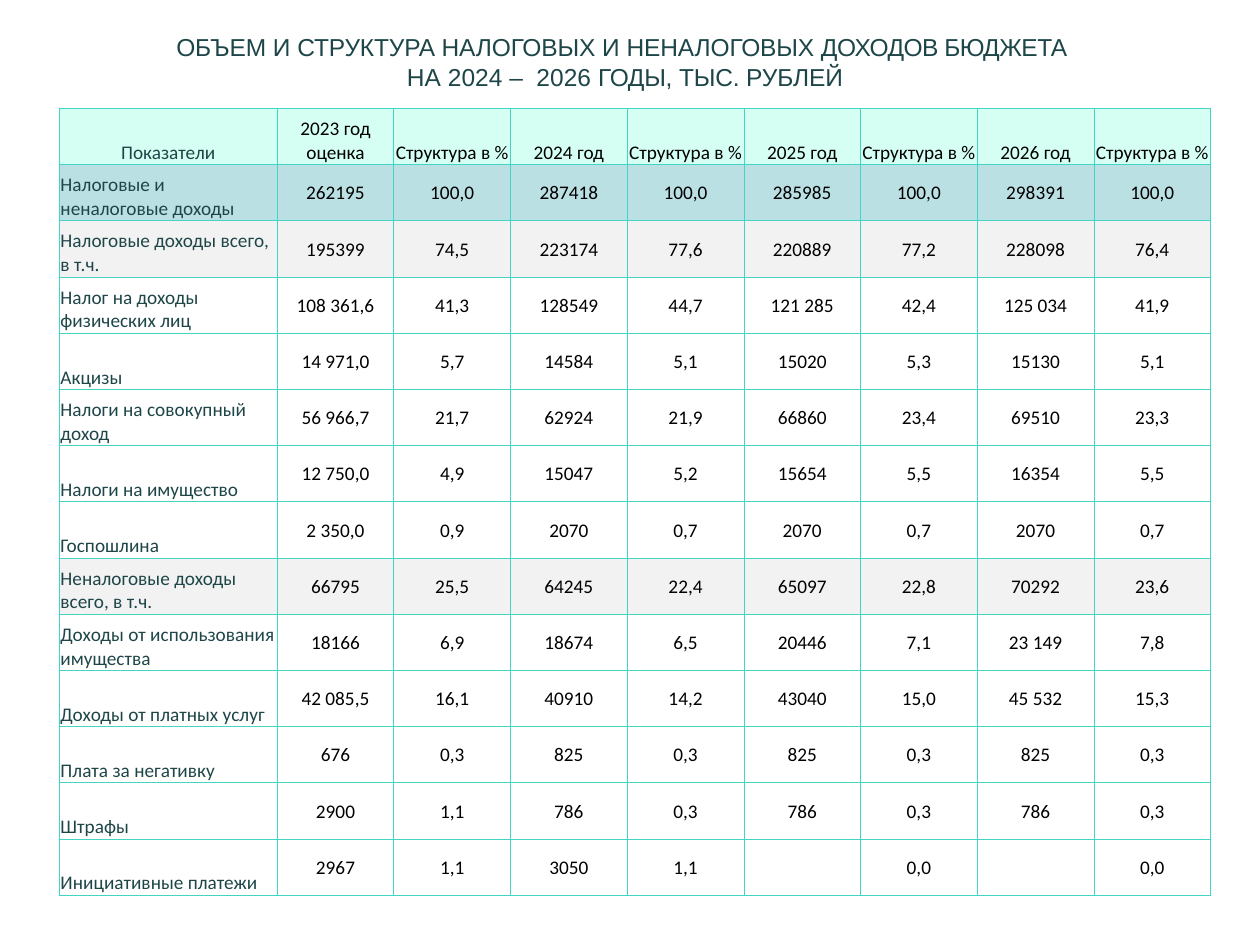
from typing import NamedTuple

import pptx
import pptx.dml.color
import pptx.enum.text
import pptx.oxml
import pptx.oxml.ns
import pptx.util
from pptx.util import Inches, Pt

ALIGN = pptx.enum.text.PP_ALIGN
ANCHOR = pptx.enum.text.MSO_ANCHOR

DARK, BLACK, BORDER = "1E4649", "000000", "44D4C3"
MINT, TEAL, GRAY = "D6FFF4", "BBE0E3", "F2F2F2"


class TitleRun(NamedTuple):
    text: str
    spacing: float = 0


class Row(NamedTuple):
    label: str
    values: str  # separated by "|"
    fill: str = ""


TITLE_LINES = [
    [
        TitleRun("ОБЪЕМ ", -0.1),
        TitleRun("И "),
        TitleRun("СТРУКТУРА НАЛОГОВЫХ ", -0.1),
        TitleRun("И "),
        TitleRun("НЕНАЛОГОВЫХ ", -0.1),
        TitleRun("ДОХОДОВ БЮДЖЕТА ", -0.3),
    ],
    [
        TitleRun("НА 2024 –  2026 "),
        TitleRun("ГОДЫ, ", -0.2),
        TitleRun("ТЫС. РУБЛЕЙ", -0.1),
    ],
]

ROWS = [
    Row("Показатели", "2023 год оценка|Структура в %|2024 год|Структура в %|"
        "2025 год|Структура в %|2026 год|Структура в %", MINT),
    Row("Налоговые и неналоговые доходы",
        "262195|100,0|287418|100,0|285985|100,0|298391|100,0", TEAL),
    Row("Налоговые доходы всего, в т.ч.",
        "195399|74,5|223174|77,6|220889|77,2|228098|76,4", GRAY),
    Row("Налог на доходы физических лиц",
        "108 361,6|41,3|128549|44,7|121 285|42,4|125 034|41,9"),
    Row("Акцизы", "14 971,0|5,7|14584|5,1|15020|5,3|15130|5,1"),
    Row("Налоги на совокупный доход",
        "56 966,7|21,7|62924|21,9|66860|23,4|69510|23,3"),
    Row("Налоги на имущество", "12 750,0|4,9|15047|5,2|15654|5,5|16354|5,5"),
    Row("Госпошлина", "2 350,0|0,9|2070|0,7|2070|0,7|2070|0,7"),
    Row("Неналоговые доходы всего, в т.ч.",
        "66795|25,5|64245|22,4|65097|22,8|70292|23,6", GRAY),
    Row("Доходы от использования имущества",
        "18166|6,9|18674|6,5|20446|7,1|23 149|7,8"),
    Row("Доходы от платных услуг",
        "42 085,5|16,1|40910|14,2|43040|15,0|45 532|15,3"),
    Row("Плата за негативку", "676|0,3|825|0,3|825|0,3|825|0,3"),
    Row("Штрафы", "2900|1,1|786|0,3|786|0,3|786|0,3"),
    Row("Инициативные платежи", "2967|1,1|3050|1,1||0,0||0,0"),
]


def rgb(color: str) -> pptx.dml.color.RGBColor:
    return pptx.dml.color.RGBColor.from_string(color)


def add_run(p, text: str, font: str, size: float, color: str):
    r = p.add_run()
    r.text = text
    r.font.name = font
    r.font.size = Pt(size)
    r.font.color.rgb = rgb(color)
    return r


def set_borders(cell, color: str, width: float) -> None:
    tc_pr = cell._tc.get_or_add_tcPr()
    for i, side in enumerate(("lnL", "lnR", "lnT", "lnB")):
        line = pptx.oxml.parse_xml(
            f'<a:{side} {pptx.oxml.ns.nsdecls("a")} w="{Pt(width)}">'
            f'<a:solidFill><a:srgbClr val="{color}"/></a:solidFill></a:{side}>')
        tc_pr.insert(i, line)


def add_title(s) -> None:
    sp = s.shapes.add_textbox(Inches(0.22), Inches(0.24), Inches(9.47), Inches(0.49))
    tf = sp.text_frame
    tf.word_wrap = True
    tf.vertical_anchor = ANCHOR.MIDDLE
    tf.margin_left = tf.margin_right = tf.margin_bottom = 0
    tf.margin_top = Inches(0.01)
    p = tf.paragraphs[0]
    p.alignment = ALIGN.CENTER
    p.space_before = Pt(1)
    p._p.get_or_add_pPr().set("marL", str(Inches(0.01)))
    for i, line in enumerate(TITLE_LINES):
        if i:
            p.add_line_break()
        for part in line:
            r = add_run(p, part.text, "Arial", 14, DARK)
            r._r.get_or_add_rPr().set("spc", str(round(part.spacing * 100)))


def fill_cell(cell, text: str, fill: str, is_label: bool, is_header: bool) -> None:
    cell.margin_left = cell.margin_right = cell.margin_top = Inches(0.01)
    cell.margin_bottom = 0
    cell.vertical_anchor = ANCHOR.BOTTOM if is_label or is_header else ANCHOR.MIDDLE
    if fill:
        cell.fill.solid()
        cell.fill.fore_color.rgb = rgb(fill)
    else:
        cell.fill.background()
    set_borders(cell, BORDER, 0.5)
    p = cell.text_frame.paragraphs[0]
    p.alignment = ALIGN.LEFT if is_label and not is_header else ALIGN.CENTER
    if text:
        add_run(p, text, "Calibri", 11, DARK if is_label else BLACK)


def add_income_table(s) -> None:
    width, height, label_width, value_cols = 9.14, 6.25, 1.73, 8
    table = s.shapes.add_table(len(ROWS), value_cols + 1, Inches(0.47), Inches(0.86),
                               Inches(width), Inches(height)).table
    table.first_row = table.horz_banding = False
    for j, col in enumerate(table.columns):
        col.width = Inches((width - label_width) / value_cols if j else label_width)
    for i, row in enumerate(ROWS):
        table.rows[i].height = Inches(height / len(ROWS))
        for j, text in enumerate([row.label, *row.values.split("|")]):
            fill_cell(table.cell(i, j), text, row.fill, j == 0, i == 0)


def main() -> None:
    prs = pptx.Presentation()
    prs.slide_width, prs.slide_height = Inches(10), Inches(7.5)
    s = prs.slides.add_slide(prs.slide_layouts[6])
    add_title(s)
    add_income_table(s)
    prs.save("out.pptx")


if __name__ == "__main__":
    main()
